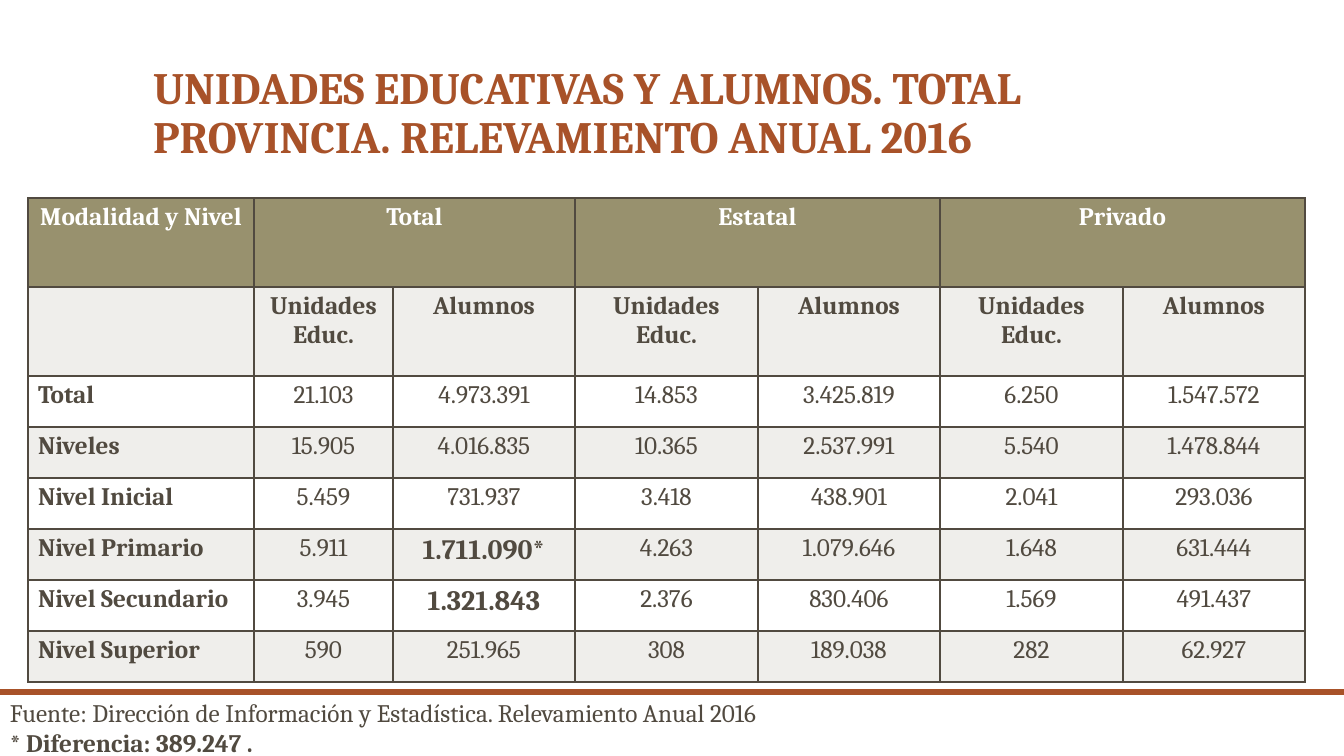
from lxml.etree import SubElement
from pptx import Presentation
from pptx.dml.color import RGBColor
from pptx.enum.shapes import MSO_SHAPE
from pptx.enum.text import MSO_ANCHOR, MSO_AUTO_SIZE, PP_ALIGN
from pptx.oxml.ns import qn
from pptx.util import Emu, Pt

EMU_PER_PX = 12192000 / 1344

RUST, BROWN, OLIVE, PALE, WHITE = "A85229", "514A40", "98916E", "EFEEEB", "FFFFFF"

TITLE = "UNIDADES EDUCATIVAS Y ALUMNOS. TOTAL PROVINCIA. RELEVAMIENTO ANUAL 2016"
SOURCE = "Fuente: Dirección de Información y Estadística. Relevamiento Anual 2016"
DIFFERENCE = "Diferencia: 389.247 ."

ROWS = [
    ["Modalidad y Nivel", "Total", "", "Estatal", "", "Privado", ""],
    [""] + ["Unidades Educ.", "Alumnos"] * 3,
    ["Total", "21.103", "4.973.391", "14.853", "3.425.819", "6.250", "1.547.572"],
    ["Niveles", "15.905", "4.016.835", "10.365", "2.537.991", "5.540", "1.478.844"],
    ["Nivel Inicial", "5.459", "731.937", "3.418", "438.901", "2.041", "293.036"],
    ["Nivel Primario", "5.911", "1.711.090*", "4.263", "1.079.646", "1.648", "631.444"],
    ["Nivel Secundario", "3.945", "1.321.843", "2.376", "830.406", "1.569", "491.437"],
    ["Nivel Superior", "590", "251.965", "308", "189.038", "282", "62.927"],
]
COL_WIDTHS = [226, 139, 182, 183, 182, 183, 182]
ROW_HEIGHTS = [89] * 2 + [51] * 6
HIGHLIGHTS = {"1.711.090*", "1.321.843"}


def px(n):
    return Emu(round(n * EMU_PER_PX))


def rgb(color):
    return RGBColor.from_string(color)


class SlideBuilder:
    font_name = "Cambria"
    size = 18
    color = BROWN

    def __init__(self, slide):
        self.s = slide

    def style(self, font, size=None, color=None, bold=False):
        font.name = self.font_name
        font.size = Pt(size or self.size)
        font.color.rgb = rgb(color or self.color)
        font.bold = bold

    def title(self, text, x, y, w, h):
        sp = self.s.shapes.title
        sp.left, sp.top, sp.width, sp.height = map(px, (x, y, w, h))
        tf = sp.text_frame
        tf.text = text
        tf.word_wrap = True
        tf.auto_size = MSO_AUTO_SIZE.NONE
        tf.vertical_anchor = MSO_ANCHOR.BOTTOM
        p = tf.paragraphs[0]
        p.alignment = PP_ALIGN.LEFT
        p.line_spacing = 0.9
        self.style(p.runs[0].font, 32, RUST, True)

    def bar(self, x, y, w, h, color):
        sp = self.s.shapes.add_shape(MSO_SHAPE.RECTANGLE, *map(px, (x, y, w, h)))
        sp.shadow.inherit = False
        sp.fill.solid()
        sp.fill.fore_color.rgb = rgb(color)
        sp.line.fill.background()

    def footer(self, source, difference, x, y, w, h):
        sp = self.s.shapes.add_textbox(*map(px, (x, y, w, h)))
        tf = sp.text_frame
        tf.word_wrap = True
        tf.auto_size = MSO_AUTO_SIZE.SHAPE_TO_FIT_TEXT
        tf.text = source + "\n* "
        for p in tf.paragraphs:
            self.style(p.runs[0].font)
        r = tf.paragraphs[1].add_run()
        r.text = difference
        self.style(r.font, bold=True)

    def borders(self, cell, color):
        tcPr = cell._tc.get_or_add_tcPr()
        for side in ("lnL", "lnR", "lnT", "lnB"):
            ln = SubElement(tcPr, qn("a:" + side), w=str(Pt(1)))
            fill = SubElement(ln, qn("a:solidFill"))
            SubElement(fill, qn("a:srgbClr"), val=color)

    def cell(self, cell, text, row, col):
        self.borders(cell, BROWN)
        cell.fill.solid()
        banded = PALE if row % 2 else WHITE
        cell.fill.fore_color.rgb = rgb(OLIVE if row == 0 else banded)
        cell.text = text
        p = cell.text_frame.paragraphs[0]
        p.alignment = PP_ALIGN.LEFT if col == 0 and row > 1 else PP_ALIGN.CENTER
        marked = text in HIGHLIGHTS
        for r in p.runs:
            self.style(r.font, 20 if marked else 18, WHITE if row == 0 else BROWN,
                       row < 2 or col == 0 or marked)

    def table(self, rows, x, y, widths, heights):
        frame = self.s.shapes.add_table(
            len(heights), len(widths), px(x), px(y), px(sum(widths)), px(sum(heights)))
        table = frame.table
        table.horz_banding = False
        for column, width in zip(table.columns, widths):
            column.width = px(width)
        for row, height in zip(table.rows, heights):
            row.height = px(height)
        for i, values in enumerate(rows):
            for j, text in enumerate(values):
                self.cell(table.cell(i, j), text, i, j)
        for j in range(1, len(widths), 2):
            table.cell(0, j).merge(table.cell(0, j + 1))


def main():
    prs = Presentation()
    prs.slide_width, prs.slide_height = px(1344), px(756)
    b = SlideBuilder(prs.slides.add_slide(prs.slide_layouts[5]))
    b.bar(0, 689, 1344, 6, RUST)
    b.title(TITLE, 143, 42, 1058, 126)
    b.table(ROWS, 28, 198, COL_WIDTHS, ROW_HEIGHTS)
    b.footer(SOURCE, DIFFERENCE, 0, 692, 1265, 72)
    prs.save("out.pptx")


if __name__ == "__main__":
    main()
